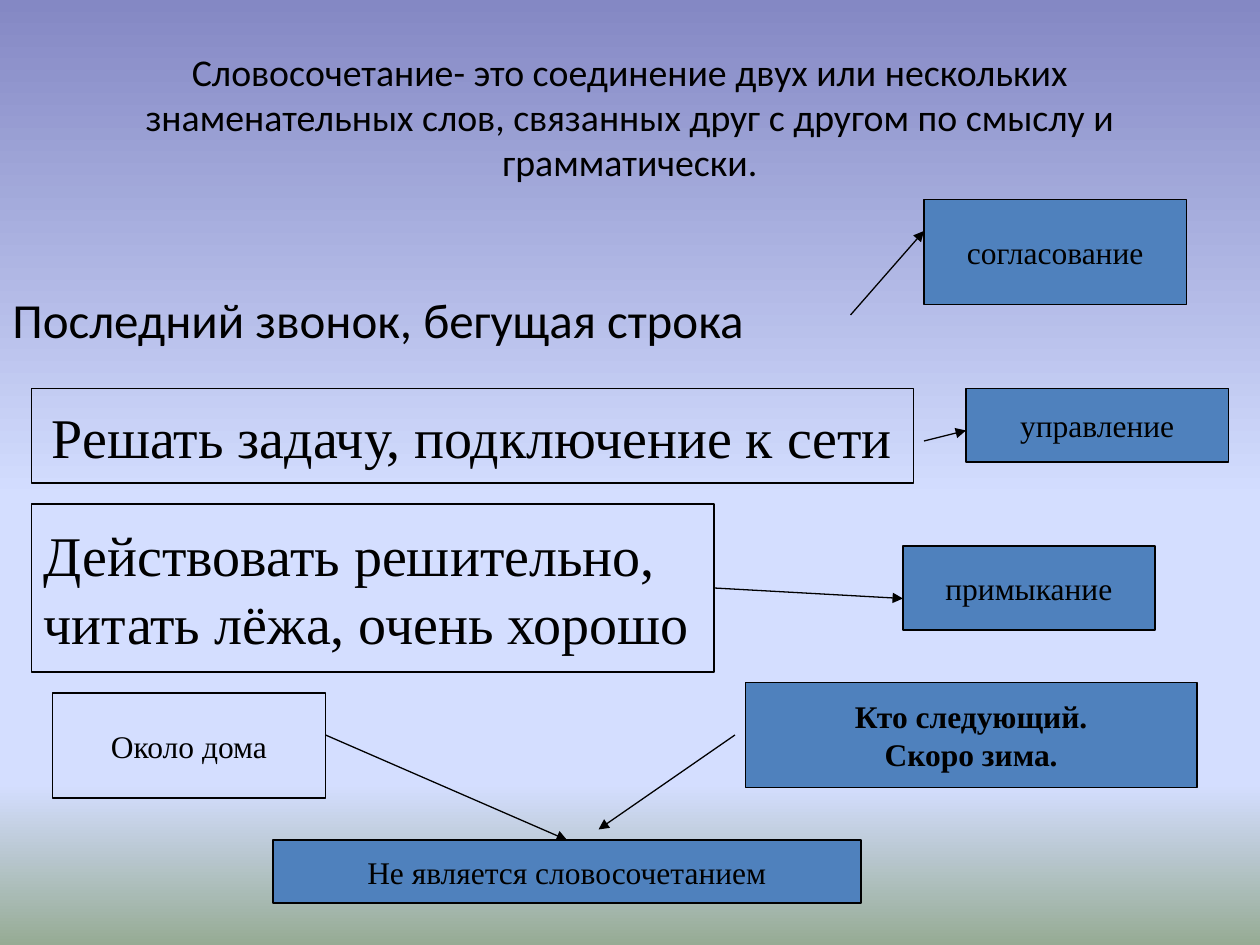
from copy import deepcopy

from pptx import Presentation
from pptx.dml.color import RGBColor
from pptx.enum.shapes import MSO_CONNECTOR, MSO_SHAPE
from pptx.enum.text import MSO_ANCHOR, MSO_AUTO_SIZE, PP_ALIGN
from pptx.oxml.ns import qn
from pptx.oxml.xmlchemy import OxmlElement
from pptx.util import Pt

RECT = MSO_SHAPE.RECTANGLE
STRAIGHT = MSO_CONNECTOR.STRAIGHT
MIDDLE, TOP = MSO_ANCHOR.MIDDLE, MSO_ANCHOR.TOP
LEFT, CENTER = PP_ALIGN.LEFT, PP_ALIGN.CENTER
NO_FIT = MSO_AUTO_SIZE.NONE

SANS, SERIF = "Calibri", "Times New Roman"
COLORS = {"ink": "000000", "term": "4F81BD"}
SKY = [(0, "8488C4"), (0.53, "D4DEFF"), (0.83, "D4DEFF"), (1, "96AB94")]

TITLE = ("Словосочетание- это соединение двух или нескольких знаменательных "
         "слов, связанных друг с другом по смыслу и грамматически.")

# lines of text, (left, top, width, height), size, alignment
EXAMPLES = [
    (["Решать задачу, подключение к сети"], (18, 222, 504, 54), 32, CENTER),
    (["Действовать решительно,", "читать лёжа, очень хорошо"],
     (18, 288, 390, 96), 32, LEFT),
    (["Около дома"], (30, 396, 156, 60), 18, CENTER),
]
# lines of text, (left, top, width, height), bold
TERMS = [
    (["Кто следующий.", "Скоро зима."], (426, 390, 258, 60), True),
    (["согласование"], (528, 114, 150, 60), False),
    (["управление"], (552, 222, 150, 42), False),
    (["примыкание"], (516, 312, 144, 48), False),
    (["Не является словосочетанием"], (156, 480, 336, 36), False),
]
# x and y of the start, x and y of the end
ARROWS = [
    (486, 180, 528, 132),
    (528, 252, 552, 246),
    (408, 336, 516, 342),
    (186, 420, 324, 480),
    (420, 420, 342, 474),
]


def rgb(name):
    return RGBColor.from_string(COLORS[name])


def points(values):
    return [Pt(v) for v in values]


def paint_background(s):
    fill = s.background.fill
    fill.gradient()
    fill.gradient_angle = 270
    stops = s.element.find(".//" + qn("a:gsLst"))
    for _ in SKY[2:]:
        stops.append(deepcopy(stops[0]))
    for stop, (position, color) in zip(fill.gradient_stops, SKY):
        stop.position = position
        stop.color.rgb = RGBColor.from_string(color)


def write(tf, lines, align=CENTER, anchor=MIDDLE, wrap=True, **font):
    frame = {"word_wrap": wrap, "auto_size": NO_FIT, "vertical_anchor": anchor}
    for name, value in frame.items():
        setattr(tf, name, value)
    for i, line in enumerate(lines):
        p = tf.paragraphs[0] if i == 0 else tf.add_paragraph()
        p.alignment = align
        r = p.add_run()
        r.text = line
        for name, value in font.items():
            setattr(r.font, name, value)
        r.font.color.rgb = rgb("ink")


def add_title(s):
    title = s.shapes.title
    place = dict(zip(("left", "top", "width", "height"),
                     points((36, 21.6, 648, 90))))
    for name, value in place.items():
        setattr(title, name, value)
    write(title.text_frame, [TITLE], name=SANS, size=Pt(21.6))


def add_text(s, line, box):
    shape = s.shapes.add_textbox(*points(box))
    write(shape.text_frame, [line], LEFT, TOP, name=SANS, size=Pt(28))


def add_box(s, lines, box, size=18, align=CENTER, bold=False, fill=None):
    shape = s.shapes.add_shape(RECT, *points(box))
    shape.shadow.inherit = False
    if fill:
        shape.fill.solid()
        shape.fill.fore_color.rgb = rgb(fill)
    else:
        shape.fill.background()
    shape.line.color.rgb = rgb("ink")
    shape.line.width = Pt(0.75)
    write(shape.text_frame, lines, align, wrap=False,
          name=SERIF, size=Pt(size), bold=bold)


def add_arrow(s, ends):
    line = s.shapes.add_connector(STRAIGHT, *points(ends))
    line.line.color.rgb = rgb("ink")
    line.line.width = Pt(0.75)
    tail = OxmlElement("a:tailEnd")
    tail.set("type", "triangle")
    line.line._get_or_add_ln().append(tail)
    line._element.spPr.append(OxmlElement("a:effectLst"))


def main():
    prs = Presentation()
    prs.slide_width, prs.slide_height = Pt(720), Pt(540)
    s = prs.slides.add_slide(prs.slide_layouts.get_by_name("Title Only"))
    paint_background(s)
    add_title(s)
    add_text(s, "Последний звонок, бегущая строка", (0, 162, 516, 48))
    for lines, box, size, align in EXAMPLES:
        add_box(s, lines, box, size, align)
    for lines, box, bold in TERMS:
        add_box(s, lines, box, bold=bold, fill="term")
    for ends in ARROWS:
        add_arrow(s, ends)
    prs.save("out.pptx")


if __name__ == "__main__":
    main()
